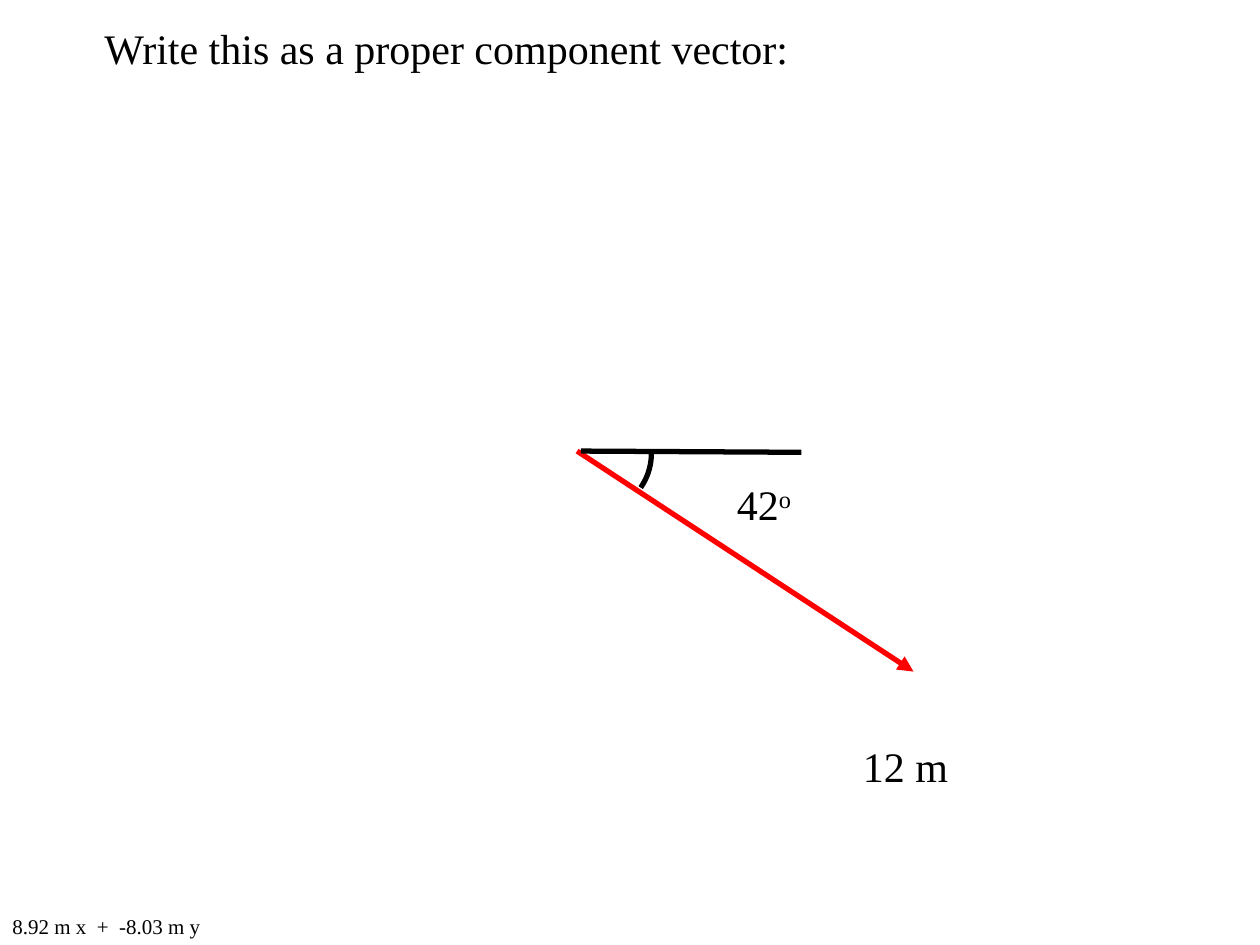
import math

from lxml import etree
from pptx import Presentation
from pptx.dml.color import RGBColor
from pptx.enum import shapes, text
from pptx.oxml.ns import qn
from pptx.util import Inches, Pt

BLACK = RGBColor(0x00, 0x00, 0x00)
RED = RGBColor(0xFF, 0x00, 0x00)
FONT = "Times New Roman"
LINE_WIDTH = Pt(3)


def add_label(page, left, top, width, height, content, size=24, superscript=None):
    box = page.shapes.add_textbox(
        Inches(left), Inches(top), Inches(width), Inches(height)
    )
    frame = box.text_frame
    frame.word_wrap = False
    frame.auto_size = text.MSO_AUTO_SIZE.SHAPE_TO_FIT_TEXT
    para = frame.paragraphs[0]
    for part in filter(None, (content, superscript)):
        span = para.add_run()
        span.text = part
        span.font.name = FONT
        span.font.size = Pt(size)
        span.font.color.rgb = BLACK
    if superscript:
        span._r.get_or_add_rPr().set("baseline", "30000")


def add_line(page, start, end, color, arrow=False):
    line = page.shapes.add_connector(
        shapes.MSO_CONNECTOR.STRAIGHT, *map(Inches, start + end)
    )
    line.line.color.rgb = color
    line.line.width = LINE_WIDTH
    if arrow:
        etree.SubElement(line.line._get_or_add_ln(), qn("a:tailEnd"), type="triangle")
    etree.SubElement(line._element.spPr, qn("a:effectLst"))


def add_angle_arc(page, center, radius, first, last, steps=16):
    angles = [math.radians(first + (last - first) * i / steps) for i in range(steps + 1)]
    points = [
        (
            Inches(center[0] + radius * math.cos(angle)),
            Inches(center[1] + radius * math.sin(angle)),
        )
        for angle in angles
    ]
    builder = page.shapes.build_freeform(*points[0])
    builder.add_line_segments(points[1:], close=False)
    arc = builder.convert_to_shape()
    arc.shadow.inherit = False
    arc.fill.background()
    arc.line.color.rgb = BLACK
    arc.line.width = LINE_WIDTH


def main():
    deck = Presentation()
    deck.slide_width = Inches(10)
    deck.slide_height = Inches(7.5)
    page = deck.slides.add_slide(deck.slide_layouts[6])

    add_line(page, (4.58, 3.58), (7.25, 5.33), RED, arrow=True)
    add_label(page, 5.75, 3.75, 0.65, 0.5, "42", superscript="o")
    add_angle_arc(page, center=(4.7, 3.6), radius=0.47, first=0, last=35)
    add_line(page, (4.61, 3.58), (6.36, 3.59), BLACK)
    add_label(page, 0.73, 0.13, 5.68, 0.5, "Write this as a proper component vector:")
    add_label(page, 6.75, 5.83, 0.88, 0.5, "12 m")
    add_label(page, 0, 7.2, 1.71, 0.3, "8.92 m x  +  -8.03 m y", size=12)

    deck.save("out.pptx")


if __name__ == "__main__":
    main()
